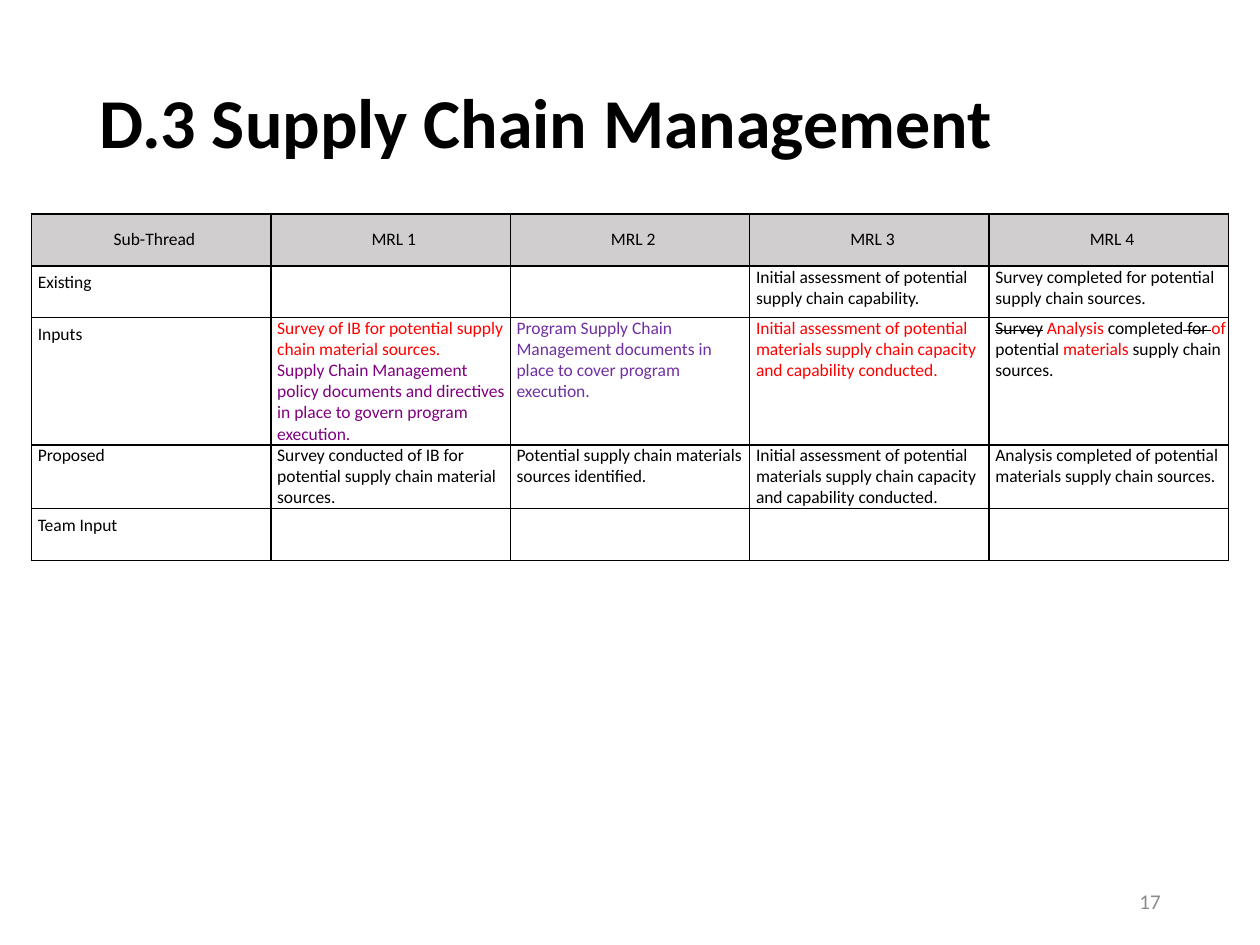
from lxml.etree import SubElement
from pptx import Presentation
from pptx.dml.color import RGBColor
from pptx.enum.text import MSO_ANCHOR, PP_ALIGN
from pptx.oxml.ns import qn
from pptx.util import Inches, Pt

FONT = "Calibri"
COLORS = {"black": "000000", "header": "D0CECE", "red": "FF0000",
          "plum": "800080", "violet": "7030A0", "gray": "8C8C8C"}
COL_W, ROW_H = 1.9, 0.41

# Cell margins: left, top, right, bottom
TIGHT = (0.05, 0, 0, 0)
LABEL = (0.05, 0.05, 0.1, 0.05)
SNUG = (0.05, 0.01, 0.01, 0)

CAPACITY = ("Initial assessment of potential materials supply chain capacity "
            "and capability conducted.")

HEADERS = ["Sub-Thread", "MRL 1", "MRL 2", "MRL 3", "MRL 4"]

# Each row: label, label margins, body margins, body cells.
# A cell is a list of paragraphs, a paragraph a list of (text, color, struck) runs.
ROWS = [
    ("Existing", LABEL, SNUG, [
        [], [],
        [[("Initial assessment of potential supply chain capability.",)]],
        [[("Survey completed for potential supply chain sources.",)]],
    ]),
    ("Inputs", LABEL, TIGHT, [
        [[("Survey of IB for potential supply chain material sources.", "red")],
         [("Supply Chain Management policy documents and directives in place "
           "to govern program execution.", "plum")]],
        [[("Program Supply Chain Management documents in place to cover "
           "program execution.", "violet")]],
        [[(CAPACITY, "red")]],
        [[("Survey", "black", True), (" ",), ("Analysis ", "red"),
          ("completed",), (" for ", "black", True), ("of ", "red"),
          ("potential ",), ("materials ", "red"), ("supply chain sources.",)]],
    ]),
    ("Proposed", TIGHT, TIGHT, [
        [[("Survey conducted of IB for potential supply chain material sources.",)]],
        [[("Potential supply chain materials sources identified.",)]],
        [[(CAPACITY,)]],
        [[("Analysis completed of potential materials supply chain sources.",)]],
    ]),
    ("Team Input", LABEL, TIGHT, [[], [], [], []]),
]


def rgb(name):
    return RGBColor.from_string(COLORS[name])


def style(font, size, color="black", bold=False):
    font.name, font.size, font.bold = FONT, Pt(size), bold
    font.color.rgb = rgb(color)


def add_run(p, text, color="black", struck=False):
    r = p.add_run()
    r.text = text
    r.font.color.rgb = rgb(color)
    if struck:
        r.font._element.set("strike", "sngStrike")


def add_borders(cell):
    tc_pr = cell._tc.get_or_add_tcPr()
    for side in ("lnL", "lnR", "lnT", "lnB"):
        ln = SubElement(tc_pr, qn(f"a:{side}"), w=str(Pt(1)))
        fill = SubElement(ln, qn("a:solidFill"))
        SubElement(fill, qn("a:srgbClr"), val=COLORS["black"])


def fill_cell(cell, paragraphs, margins, header=False):
    add_borders(cell)
    if header:
        cell.fill.solid()
        cell.fill.fore_color.rgb = rgb("header")
    else:
        cell.fill.background()
    (cell.margin_left, cell.margin_top,
     cell.margin_right, cell.margin_bottom) = map(Inches, margins)
    cell.vertical_anchor = MSO_ANCHOR.MIDDLE if header else MSO_ANCHOR.TOP
    tf = cell.text_frame
    for i, runs in enumerate(paragraphs or [[]]):
        p = tf.add_paragraph() if i else tf.paragraphs[0]
        style(p.font, 10)
        p.alignment = PP_ALIGN.CENTER if header else PP_ALIGN.LEFT
        for run in runs:
            add_run(p, *run)
            style_run = p.runs[-1].font
            style_run.name, style_run.size = FONT, Pt(10)


def add_maturity_table(s):
    n_rows, n_cols = len(ROWS) + 1, len(HEADERS)
    table = s.shapes.add_table(n_rows, n_cols, Inches(0.25), Inches(1.7),
                               Inches(n_cols * COL_W), Inches(n_rows * ROW_H)).table
    table.first_row = table.horz_banding = False
    for row in table.rows:
        row.height = Inches(ROW_H)
    for c, text in enumerate(HEADERS):
        fill_cell(table.cell(0, c), [[(text,)]], TIGHT, header=True)
    for r, (label, label_margins, margins, cells) in enumerate(ROWS, 1):
        fill_cell(table.cell(r, 0), [[(label,)]], label_margins)
        for c, paragraphs in enumerate(cells, 1):
            fill_cell(table.cell(r, c), paragraphs, margins)


def set_title(s, text):
    title = s.shapes.title
    title.left, title.top, title.width, title.height = map(
        Inches, (0.69, 0.4, 8.62, 1.2))
    tf = title.text_frame
    tf.text = text
    tf.vertical_anchor = MSO_ANCHOR.MIDDLE
    p = tf.paragraphs[0]
    p.alignment, p.line_spacing = PP_ALIGN.LEFT, 0.9
    style(p.font, 40, bold=True)


def add_page_number(s, number):
    tf = s.shapes.add_textbox(*map(Inches, (7.06, 6.95, 2.25, 0.4))).text_frame
    tf.word_wrap = True
    tf.vertical_anchor = MSO_ANCHOR.MIDDLE
    p = tf.paragraphs[0]
    p.text = str(number)
    p.alignment = PP_ALIGN.RIGHT
    style(p.font, 12, "gray")


def main():
    prs = Presentation()
    prs.slide_width, prs.slide_height = Inches(10), Inches(7.5)
    s = prs.slides.add_slide(prs.slide_layouts[5])
    set_title(s, "D.3 Supply Chain Management")
    add_maturity_table(s)
    add_page_number(s, 17)
    prs.save("out.pptx")


if __name__ == "__main__":
    main()
